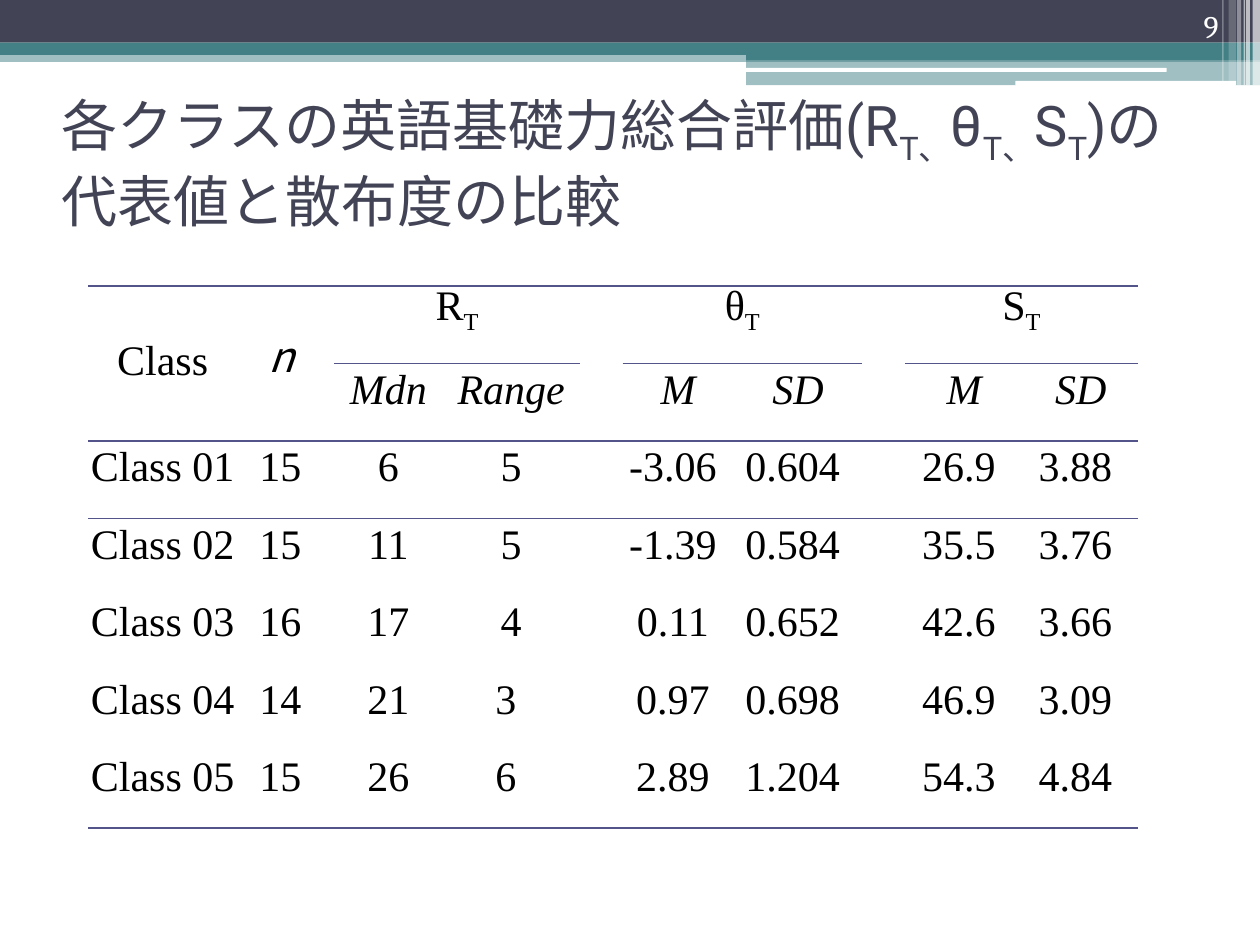
"""Build the slide that compares the classes' overall English scores."""
import pptx
import pptx.dml.color
import pptx.enum.shapes
import pptx.enum.text
import pptx.oxml
import pptx.oxml.ns
import pptx.util

Cm, Pt = pptx.util.Cm, pptx.util.Pt
SHAPES = pptx.enum.shapes.MSO_SHAPE
ALIGN = pptx.enum.text.PP_ALIGN
ANCHOR = pptx.enum.text.MSO_ANCHOR
NAVY, TEAL, WHITE, BLACK, RULE = "424456", "438086", "FFFFFF", "000000", "53548A"
PLAIN_TABLE = "{2D5ABB26-0587-4C30-8999-92F81FD0307C}"

BANDS = [
    (0, 1.02, 25.4, 0.23, TEAL, 50),
    (0, 0, 25.4, 0.86, NAVY, 100),
    (0, 0.86, 25.4, 0.25, TEAL, 100),
    (15.04, 0.99, 10.36, 0.23, TEAL, 100),
    (15.04, 1.22, 10.36, 0.5, TEAL, 50),
]
PILLS = [(15.01, 1.37, 8.51, 0.08), (20.47, 1.63, 4.45, 0.1)]
STRIPES = [
    (25.25, 0.15, 1.73, 65),
    (25.12, 0.08, 1.73, 65),
    (25.07, 0.03, 1.73, 60),
    (24.94, 0.08, 1.73, 40),
    (24.77, 0.15, 1.63, 20),
    (24.64, 0.03, 1.63, 30),
]
COLUMNS = [3, 1.96, 2.18, 2.77, 0.86, 2.24, 2.59, 0.86, 2.39, 2.31]
ROW_HEIGHT = 1.56
GROUPS = {2: "R|T", 5: "θ|T", 8: "S|T"}
MEASURES = {2: "Mdn", 3: "Range", 5: "M", 6: "SD", 8: "M", 9: "SD"}
SCORES = [
    ["Class 01 ", "15 ", "6", "5", "", "-3.06 ", "0.604 ", "", "26.9 ", "3.88 "],
    ["Class 02 ", "15 ", "11", "5", "", "-1.39 ", "0.584 ", "", "35.5 ", "3.76 "],
    ["Class 03 ", "16 ", "17", "4", "", "0.11 ", "0.652 ", "", "42.6 ", "3.66 "],
    ["Class 04 ", "14 ", "21", "3 ", "", "0.97 ", "0.698 ", "", "46.9 ", "3.09 "],
    ["Class 05 ", "15 ", "26", "6 ", "", "2.89 ", "1.204 ", "", "54.3 ", "4.84 "],
]


def colour(value):
    return pptx.dml.color.RGBColor.from_string(value)


def assign(target, values):
    for name, value in values.items():
        setattr(target, name, value)


class Slide:
    styles = {
        "title": {"name": "Roboto", "size": Pt(32)},
        "number": {"name": "Cambria", "size": Pt(18)},
        "cell": {"name": "Times New Roman", "size": Pt(24)},
        "measure": {"name": "Times New Roman", "size": Pt(24), "italic": True},
        "count": {"name": "Noto Sans CJK JP", "size": Pt(24), "italic": True},
    }

    def __init__(self, deck):
        self.page = deck.slides.add_slide(deck.slide_layouts[5])

    def spans(self, para, text, style, ink):
        for index, part in enumerate(text.split("|")):
            span = para.add_run()
            span.text = part
            assign(span.font, self.styles[style])
            span.font.color.rgb = colour(ink)
            properties = span._r.get_or_add_rPr()
            if index % 2:
                properties.set("baseline", "-25000")
            east_asian = pptx.oxml.parse_xml(
                f'<a:ea {pptx.oxml.ns.nsdecls("a")} typeface="Noto Sans CJK JP"/>')
            properties.find(pptx.oxml.ns.qn("a:latin")).addnext(east_asian)

    def title(self, text, left, top, width, height):
        box = self.page.shapes.title
        assign(box, {"left": Cm(left), "top": Cm(top), "width": Cm(width), "height": Cm(height)})
        assign(box.text_frame, {"word_wrap": True, "vertical_anchor": ANCHOR.MIDDLE,
                                "auto_size": pptx.enum.text.MSO_AUTO_SIZE.NONE})
        para = box.text_frame.paragraphs[0]
        para.alignment = ALIGN.LEFT
        self.spans(para, text, "title", NAVY)

    def number(self, text, left, top, width, height):
        box = self.page.shapes.add_textbox(Cm(left), Cm(top), Cm(width), Cm(height))
        assign(box.text_frame, {"word_wrap": True, "vertical_anchor": ANCHOR.BOTTOM})
        para = box.text_frame.paragraphs[0]
        para.alignment = ALIGN.RIGHT
        self.spans(para, text, "number", WHITE)

    def band(self, left, top, width, height, fill, opacity=100, kind=SHAPES.RECTANGLE):
        box = self.page.shapes.add_shape(kind, Cm(left), Cm(top), Cm(width), Cm(height))
        box.shadow.inherit = False
        box.line.fill.background()
        box.fill.solid()
        box.fill.fore_color.rgb = colour(fill)
        if opacity < 100:
            tint = box._element.spPr.find(".//" + pptx.oxml.ns.qn("a:srgbClr"))
            tint.append(pptx.oxml.parse_xml(
                f'<a:alpha {pptx.oxml.ns.nsdecls("a")} val="{opacity * 1000}"/>'))

    def table(self, left, top, widths, row_height, rows):
        frame = self.page.shapes.add_table(
            rows, len(widths), Cm(left), Cm(top), Cm(sum(widths)), Cm(row_height * rows))
        table = frame.table
        assign(table, {"first_row": False, "horz_banding": False})
        table._tbl.tblPr.find(pptx.oxml.ns.qn("a:tableStyleId")).text = PLAIN_TABLE
        for column, width in zip(table.columns, widths):
            column.width = Cm(width)
        for row in table.rows:
            row.height = Cm(row_height)
        for cell in table.iter_cells():
            cell.fill.background()
        return table

    def cell(self, cell, text, style="cell", margin_top=Cm(0.03)):
        assign(cell, {"vertical_anchor": ANCHOR.MIDDLE, "margin_left": Cm(0.03),
                      "margin_right": Cm(0.03), "margin_top": margin_top, "margin_bottom": 0})
        para = cell.text_frame.paragraphs[0]
        assign(para, {"alignment": ALIGN.CENTER, "line_spacing": Pt(12)})
        self.spans(para, text, style, BLACK)

    def rule(self, table, row, columns):
        for column in columns:
            for edge, line in (("lnB", row - 1), ("lnT", row)):
                if 0 <= line < len(table.rows):
                    properties = table.cell(line, column)._tc.get_or_add_tcPr()
                    properties.insert(0, pptx.oxml.parse_xml(
                        f'<a:{edge} {pptx.oxml.ns.nsdecls("a")} w="{Pt(1)}"><a:solidFill>'
                        f'<a:srgbClr val="{RULE}"/></a:solidFill></a:{edge}>'))


def main():
    deck = pptx.Presentation()
    assign(deck, {"slide_width": Cm(25.4), "slide_height": Cm(19.05)})
    slide = Slide(deck)

    for band in BANDS:
        slide.band(*band)
    for pill in PILLS:
        slide.band(*pill, WHITE, kind=SHAPES.ROUNDED_RECTANGLE)
    for left, width, height, opacity in STRIPES:
        slide.band(left, 0, width, height, WHITE, opacity)
    slide.title("各クラスの英語基礎力総合評価(R|T、|θ|T、|S|T|)の代表値と散布度の比較",
                0.99, 1.78, 22.86, 2.97)
    slide.number("9", 22.71, 0, 2.11, 1.02)

    rows = len(SCORES) + 2
    table = slide.table(1.78, 5.77, COLUMNS, ROW_HEIGHT, rows)
    every_column = range(len(COLUMNS))
    for row, columns in ((rows, every_column), (2, every_column), (1, MEASURES), (0, every_column)):
        slide.rule(table, row, columns)
    for column, (text, style) in enumerate([("Class", "cell"), ("n ", "count")]):
        table.cell(0, column).merge(table.cell(1, column))
        slide.cell(table.cell(0, column), text, style, Pt(12))
    for column, text in GROUPS.items():
        table.cell(0, column).merge(table.cell(0, column + 1))
        slide.cell(table.cell(0, column), text)
    for column, text in MEASURES.items():
        slide.cell(table.cell(1, column), text, "measure")
    for row, scores in enumerate(SCORES, 2):
        for column, text in enumerate(scores):
            if text:
                slide.cell(table.cell(row, column), text)
    deck.save("out.pptx")


if __name__ == "__main__":
    main()
